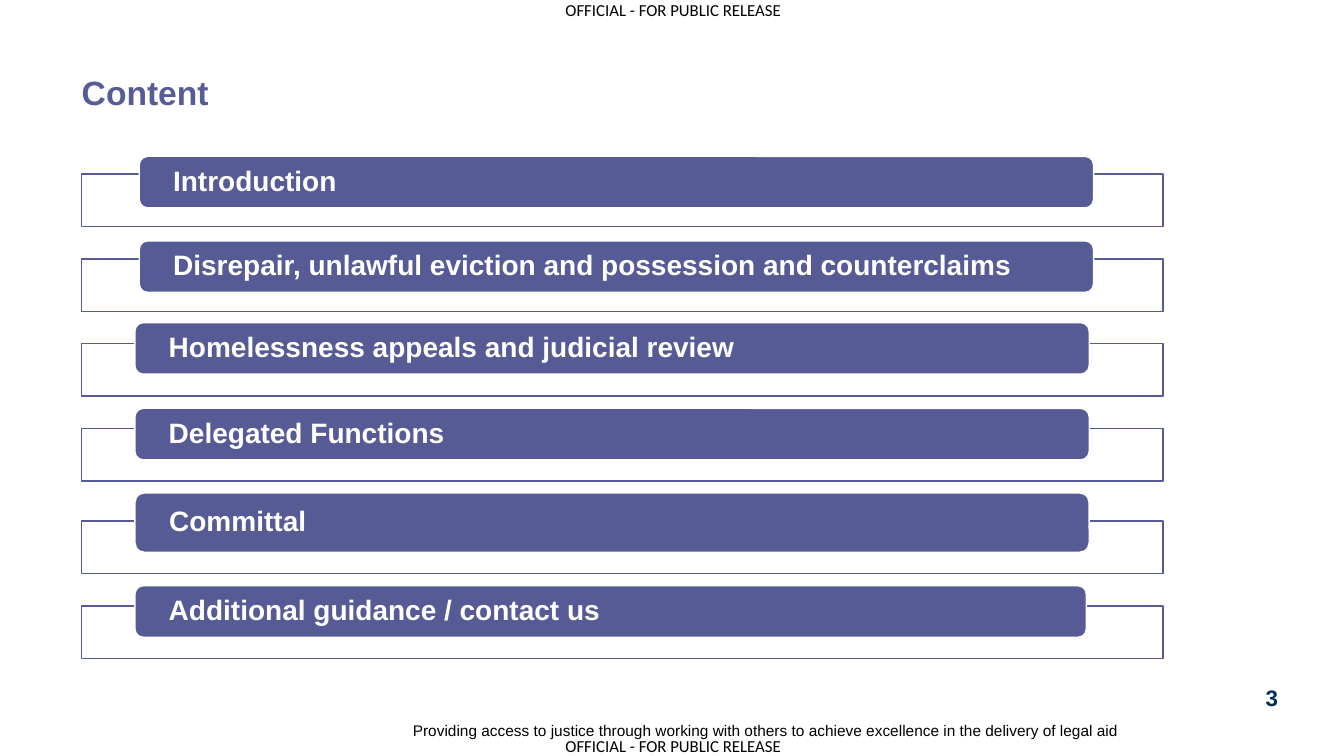
import pptx
import pptx.util
import pptx.dml.color
import pptx.enum.shapes
import pptx.enum.text
import pptx.oxml.ns
from lxml import etree

Cm = pptx.util.Cm
Pt = pptx.util.Pt
RGBColor = pptx.dml.color.RGBColor
SHAPE = pptx.enum.shapes.MSO_SHAPE
ALIGN = pptx.enum.text.PP_ALIGN
ANCHOR = pptx.enum.text.MSO_ANCHOR

PURPLE = RGBColor(0x56, 0x5B, 0x96)
TITLE_PURPLE = RGBColor(0x57, 0x5C, 0x96)
NAVY = RGBColor(0x00, 0x30, 0x57)
BLACK = RGBColor(0x00, 0x00, 0x00)
WHITE = RGBColor(0xFF, 0xFF, 0xFF)

MARKING = "OFFICIAL - FOR PUBLIC RELEASE"
LEFT = 2.06
FRAME_WIDTH, FRAME_HEIGHT = 27.25, 1.32

# Text, frame top, then bar left, top, width and height, all in cm
SECTIONS = [
    ("Introduction", 4.39, 3.51, 3.94, 24.05, 1.3),
    ("Disrepair, unlawful eviction and possession and counterclaims",
     6.53, 3.51, 6.07, 24.05, 1.3),
    ("Homelessness appeals and judicial review", 8.66, 3.4, 8.13, 24.05, 1.3),
    ("Delegated Functions", 10.8, 3.4, 10.29, 24.05, 1.3),
    ("Committal", 13.13, 3.4, 12.42, 24.05, 1.5),
    ("Additional guidance / contact us", 15.27, 3.4, 14.76, 23.98, 1.3),
]


def write(s, text, size, color, font="Arial", bold=False, align=ALIGN.LEFT,
          anchor=ANCHOR.TOP, inset=0, spacing=1.0, wrap=True):
    """Put one formatted paragraph in a shape; inset is the side margin in cm."""
    tf = s.text_frame
    tf.auto_size = pptx.enum.text.MSO_AUTO_SIZE.NONE
    tf.word_wrap = wrap
    tf.vertical_anchor = anchor
    tf.margin_left = tf.margin_right = Cm(inset)
    tf.margin_top = tf.margin_bottom = 0
    p = tf.paragraphs[0]
    p.alignment = align
    p.line_spacing = spacing
    r = p.add_run()
    r.text = text
    r.font.name = font
    r.font.size = Pt(size)
    r.font.bold = bold
    r.font.color.rgb = color


def add_text(shapes, left, top, width, height, text, size, color, **style):
    s = shapes.add_textbox(Cm(left), Cm(top), Cm(width), Cm(height))
    write(s, text, size, color, **style)


def add_box(shapes, kind, left, top, width, height, fill, line):
    s = shapes.add_shape(kind, Cm(left), Cm(top), Cm(width), Cm(height))
    s.shadow.inherit = False
    s.fill.solid()
    s.fill.fore_color.rgb = fill
    s.line.color.rgb = line
    s.line.width = Pt(1)
    return s


def set_opacity(s, percent):
    qn = pptx.oxml.ns.qn
    color = s.fill._xPr.find(qn("a:solidFill")).find(qn("a:srgbClr"))
    etree.SubElement(color, qn("a:alpha")).set("val", str(percent * 1000))


def add_section(shapes, text, frame_top, left, top, width, height):
    """Draw an outlined frame with a titled bar overlapping its top edge."""
    frame = add_box(shapes, SHAPE.RECTANGLE, LEFT, frame_top,
                    FRAME_WIDTH, FRAME_HEIGHT, WHITE, PURPLE)
    set_opacity(frame, 90)
    bar = add_box(shapes, SHAPE.ROUNDED_RECTANGLE, left, top, width, height,
                  PURPLE, WHITE)
    write(bar, text, 20, WHITE, bold=True, anchor=ANCHOR.MIDDLE, inset=0.79,
          spacing=0.9)


def add_title(slide, text):
    s = slide.shapes.title
    s.left, s.top, s.width, s.height = Cm(LEFT), Cm(1.93), Cm(21.44), Cm(0.97)
    write(s, text, 24, TITLE_PURPLE, bold=True, spacing=0.9)


def main():
    prs = pptx.Presentation()
    prs.slide_width, prs.slide_height = Cm(33.87), Cm(19.05)
    slide = prs.slides.add_slide(prs.slide_layouts[5])
    shapes = slide.shapes

    add_title(slide, "Content")
    for top in (0, 18.54):
        add_text(shapes, 14.2, top, 5.54, 0.51, MARKING, 12, BLACK,
                 font="Calibri", align=ALIGN.CENTER, wrap=False)
    group = shapes.add_group_shape()
    for section in SECTIONS:
        add_section(group.shapes, *section)
    add_text(shapes, 31.67, 17.25, 0.76, 0.71, "3", 16, NAVY, bold=True,
             align=ALIGN.CENTER)
    add_text(shapes, 8.18, 18.14, 20.02, 0.51,
             "Providing access to justice through working with others to "
             "achieve excellence in the delivery of legal aid",
             11, BLACK, align=ALIGN.RIGHT, anchor=ANCHOR.BOTTOM)
    prs.save("out.pptx")


if __name__ == "__main__":
    main()
